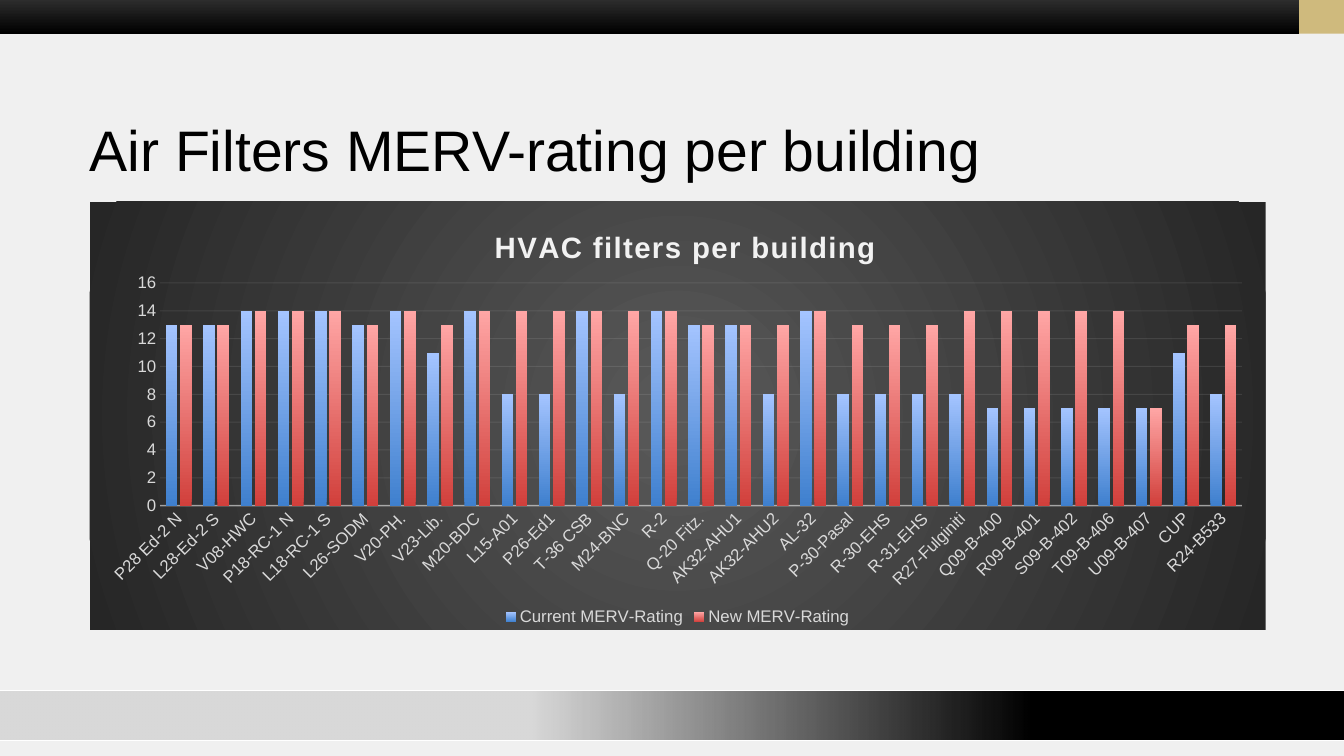
"""Build the slide that charts air filter MERV ratings per building."""
from dataclasses import dataclass

from lxml import etree
from pptx import Presentation
from pptx.chart.data import CategoryChartData
from pptx.dml.color import RGBColor as RGB
from pptx.enum.chart import XL_CHART_TYPE as CT, XL_LEGEND_POSITION as LP, XL_TICK_MARK as TM
from pptx.enum.shapes import MSO_SHAPE as SHAPE
from pptx.enum.text import MSO_ANCHOR, MSO_AUTO_SIZE, PP_ALIGN
from pptx.oxml import parse_xml
from pptx.oxml.ns import nsdecls, qn
from pptx.util import Pt


@dataclass(frozen=True)
class Theme:
    font: str = "Arial"
    back: str = "F0F0F0"
    ink: str = "000000"
    charcoal: str = "333333"
    gold: str = "CFBA7D"
    white: str = "FFFFFF"
    pale: str = "F2F2F2"
    label: str = "D9D9D9"
    chart_inner: str = "595959"
    chart_outer: str = "262626"
    blues: tuple = ("3F80CE", "A4C4FF")
    reds: tuple = ("D1403C", "FFA6A5")
    title_size: float = 40.8
    chart_title_size: float = 21
    label_size: float = 12


RATINGS = [
    ("P28 Ed-2 N", 13, 13), ("L28-Ed-2 S", 13, 13), ("V08-HWC", 14, 14),
    ("P18-RC-1 N", 14, 14), ("L18-RC-1 S", 14, 14), ("L26-SODM", 13, 13),
    ("V20-PH.", 14, 14), ("V23-Lib.", 11, 13), ("M20-BDC", 14, 14),
    ("L15-A01", 8, 14), ("P26-Ed1", 8, 14), ("T-36 CSB", 14, 14),
    ("M24-BNC", 8, 14), ("R-2", 14, 14), ("Q-20 Fitz.", 13, 13),
    ("AK32-AHU1", 13, 13), ("AK32-AHU2", 8, 13), ("AL-32", 14, 14),
    ("P-30-Pasal", 8, 13), ("R-30-EHS", 8, 13), ("R-31-EHS", 8, 13),
    ("R27-Fulginiti", 8, 14), ("Q09-B-400", 7, 14), ("R09-B-401", 7, 14),
    ("S09-B-402", 7, 14), ("T09-B-406", 7, 14), ("U09-B-407", 7, 7),
    ("CUP", 11, 13), ("R24-B533", 8, 13),
]


class Deck:
    """Holds the theme and the current slide."""

    def __init__(self, theme):
        self.theme = theme
        self.prs = Presentation()
        self.prs.slide_width, self.prs.slide_height = Pt(960), Pt(540)
        self.s = self.prs.slides.add_slide(self.prs.slide_layouts[5])
        fill = self.s.background.fill
        fill.solid()
        fill.fore_color.rgb = RGB.from_string(theme.back)

    def style(self, font, size, color, bold=False):
        font.name, font.size, font.bold = self.theme.font, Pt(size), bold
        font.color.rgb = RGB.from_string(color)

    def gradient(self, element, stops, angle=None):
        """Swap the element's gradient; without an angle it is circular."""
        gs = "".join(
            f'<a:gs pos="{pos * 1000}"><a:srgbClr val="{color}">'
            f'<a:alpha val="{alpha * 1000}"/></a:srgbClr></a:gs>'
            for pos, color, alpha in stops)
        if angle is None:
            shade = ('<a:path path="circle"><a:fillToRect l="50000" t="50000" '
                     'r="50000" b="50000"/></a:path>')
        else:
            shade = f'<a:lin ang="{angle * 60000}" scaled="0"/>'
        old = element.find(".//" + qn("a:gradFill"))
        old.getparent().replace(old, parse_xml(
            f'<a:gradFill {nsdecls("a")} rotWithShape="1"><a:gsLst>{gs}</a:gsLst>{shade}</a:gradFill>'))

    def bar(self, kind, x, y, w, h, color=None, stops=None, angle=0, line=None):
        sp = self.s.shapes.add_shape(kind, Pt(x), Pt(y), Pt(w), Pt(h))
        sp.shadow.inherit = False
        if stops:
            sp.fill.gradient()
            self.gradient(sp.element, stops, angle)
        else:
            sp.fill.solid()
            sp.fill.fore_color.rgb = RGB.from_string(color)
        if line:
            sp.line.color.rgb = RGB.from_string(line)
            sp.line.width = Pt(0.75)
        else:
            sp.line.fill.background()
        return sp

    def title(self, text, x, y, w, h):
        sp = self.s.shapes.title
        sp.element.getparent().append(sp.element)
        sp.left, sp.top, sp.width, sp.height = Pt(x), Pt(y), Pt(w), Pt(h)
        tf = sp.text_frame
        tf.word_wrap, tf.auto_size = True, MSO_AUTO_SIZE.NONE
        tf.vertical_anchor = MSO_ANCHOR.MIDDLE
        tf.margin_left, tf.margin_right = Pt(0), Pt(7.2)
        tf.margin_top = tf.margin_bottom = Pt(3.6)
        p = tf.paragraphs[0]
        p.alignment = PP_ALIGN.LEFT
        r = p.add_run()
        r.text = text
        self.style(r.font, self.theme.title_size, self.theme.ink)

    def faint_line(self, fmt, width, alpha):
        fmt.line.color.rgb = RGB.from_string(self.theme.pale)
        fmt.line.width = Pt(width)
        color = fmt.element.find(f".//{qn('a:ln')}//{qn('a:srgbClr')}")
        etree.SubElement(color, qn("a:alpha")).set("val", str(alpha * 1000))

    def layout(self, parent, after, inner=False, **place):
        """Fix the place of a chart part as fractions of the chart."""
        for old in parent.findall(qn("c:layout")):
            parent.remove(old)
        target = '<c:layoutTarget val="inner"/>' if inner else ""
        modes = "".join(f'<c:{k}Mode val="edge"/>' for k in "xy")
        sizes = "".join(f'<c:{k} val="{v}"/>' for k, v in place.items())
        node = parse_xml(f'<c:layout {nsdecls("c")}><c:manualLayout>{target}{modes}'
                         f'{sizes}</c:manualLayout></c:layout>')
        if after is None:
            parent.insert(0, node)
        else:
            after.addnext(node)

    def chart(self, heading, rows, series, x, y, w, h):
        """Add the clustered columns, one (name, colours) pair per series."""
        t = self.theme
        data = CategoryChartData()
        names, *columns = zip(*rows)
        data.categories = names
        for (name, _), values in zip(series, columns):
            data.add_series(name, values)
        chart = self.s.shapes.add_chart(
            CT.COLUMN_CLUSTERED, Pt(x), Pt(y), Pt(w), Pt(h), data).chart
        self.style(chart.font, 10, t.ink)
        body = chart.element.find(qn("c:chart"))
        area = parse_xml(f'<c:spPr {nsdecls("c", "a")}><a:gradFill/><a:ln><a:noFill/></a:ln></c:spPr>')
        body.addnext(area)
        self.gradient(area, [(0, t.chart_inner, 100), (100, t.chart_outer, 100)])

        chart.has_title = True
        r = chart.chart_title.text_frame.paragraphs[0].add_run()
        r.text = heading
        self.style(r.font, t.chart_title_size, t.pale, bold=True)
        r.font._element.set("spc", "100")
        title = body.find(qn("c:title"))
        self.layout(title, title.find(qn("c:tx")), x=0.34, y=0.05)
        self.layout(body.find(qn("c:plotArea")), None, True, x=0.06, y=0.19, w=0.92, h=0.52)

        chart.has_legend = True
        chart.legend.position, chart.legend.include_in_layout = LP.BOTTOM, False
        self.style(chart.legend.font, t.label_size, t.label)
        cat, val = chart.category_axis, chart.value_axis
        for axis in (cat, val):
            axis.major_tick_mark = axis.minor_tick_mark = TM.NONE
            self.style(axis.tick_labels.font, t.label_size, t.label)
        cat.element = None
        cat.format.element.find(f"{qn('c:txPr')}/{qn('a:bodyPr')}").set("rot", "-2700000")
        self.faint_line(cat.format, 1, 54)
        val.minimum_scale, val.maximum_scale, val.major_unit = 0, 16, 2
        val.format.line.fill.background()
        self.faint_line(val.major_gridlines.format, 0.75, 10)

        plot = chart.plots[0]
        plot.gap_width, plot.overlap, plot.vary_by_categories = 100, -24, False
        for ser, (_, (low, high)) in zip(plot.series, series):
            ser.format.fill.gradient()
            self.gradient(ser.format.element, [(0, low, 100), (100, high, 100)], 270)


def main():
    t = Theme()
    deck = Deck(t)
    footer = deck.bar(SHAPE.ROUNDED_RECTANGLE, -16, 493.2, 992, 36, line=t.white,
                      stops=[(40, t.ink, 10), (76, t.ink, 100)])
    footer.adjustments[0] = 0
    deck.bar(SHAPE.RECTANGLE, 0, -3.6, 928, 27.6, angle=90,
             stops=[(0, t.charcoal, 100), (100, t.ink, 100)])
    deck.bar(SHAPE.RECTANGLE, 928, -3.6, 32, 27.6, color=t.gold)
    deck.title("Air Filters MERV-rating per building", 64, 79.2, 840, 54)
    deck.chart("HVAC filters per building", RATINGS,
               [("Current MERV-Rating", t.blues), ("New MERV-Rating", t.reds)],
               64, 144, 840, 306)
    deck.prs.save("out.pptx")


if __name__ == "__main__":
    main()
